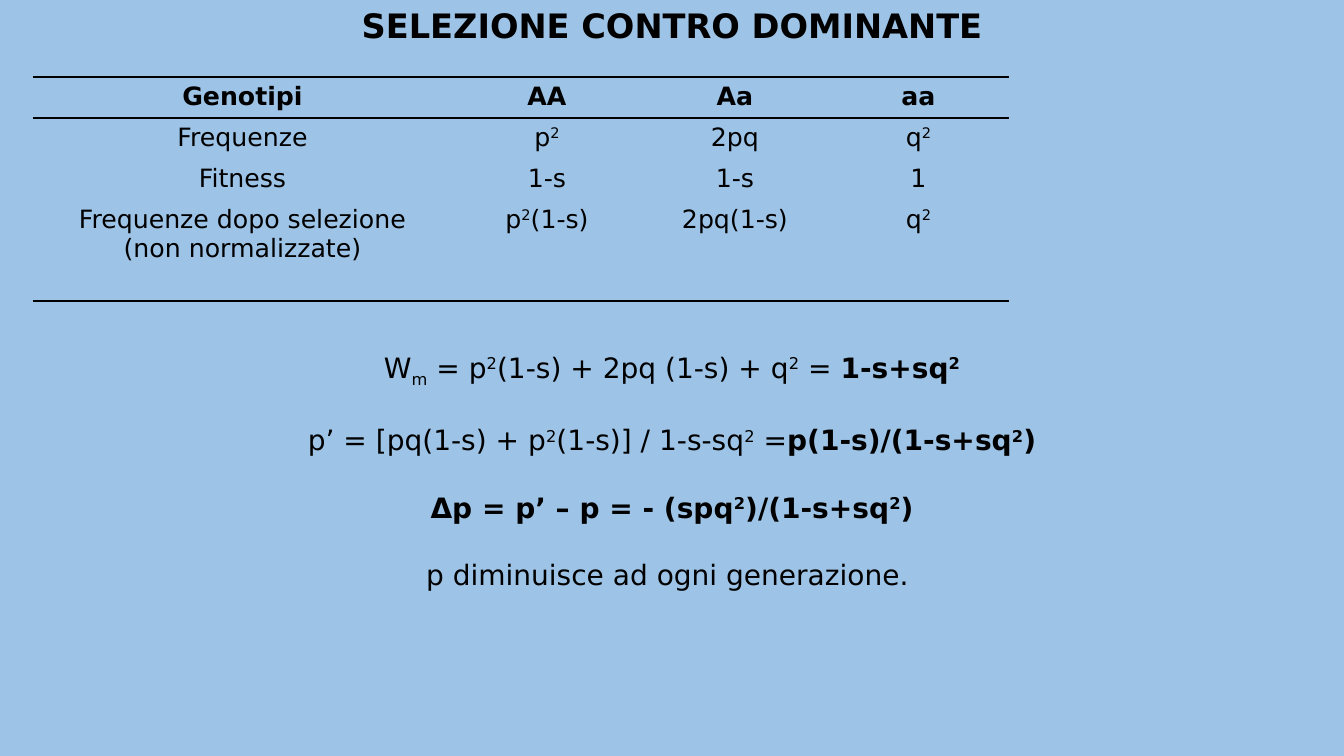
import lxml.etree
import pptx
import pptx.dml.color
import pptx.enum.text
import pptx.oxml.ns
import pptx.util

EMU = 914400 / 100.8
FONT = "DejaVu Sans"
COLORS = {"back": "9DC3E6", "ink": "000000"}
BASE = {"^": "30000", "_": "-25000"}
PLAIN = "{2D5ABB26-0587-4C30-8999-92F81FD0307C}"  # table style without grid

TITLE = "*SELEZIONE CONTRO DOMINANTE"
COLS = [419, 190, 186, 181]
ROWS = [41, 41, 41, 101]
CELLS = [
    ["*Genotipi", "*AA", "*Aa", "*aa"],
    ["Frequenze", "p|^2", "2pq", "q|^2"],
    ["Fitness", "1-s", "1-s", "1"],
    ["Frequenze dopo selezione\n(non normalizzate)",
     "p|^2|(1-s)", "2pq(1-s)", "q|^2"],
]
STEPS = [
    "W|_m| = p|^2|(1-s) + 2pq (1-s) + q|^2| = |*1-s+sq|*^2",
    "p’ = [pq(1-s) + p|^2|(1-s)] / 1-s-sq|^2| =|*p(1-s)/(1-s+sq|*^2|*)",
    "*Δp = p’ – p = - (spq|*^2|*)/(1-s+sq|*^2|*)",
    "p diminuisce ad ogni generazione. ",
]


def px(num):
    return pptx.util.Emu(round(num * EMU))


def color(name):
    return pptx.dml.color.RGBColor.from_string(COLORS[name])


def add_sub(node, tag, **attrs):
    return lxml.etree.SubElement(node, pptx.oxml.ns.qn(tag), attrs)


def add_runs(para, text, size):
    """Add runs split at |, where * marks bold, ^ raised and _ lowered."""
    para.alignment = pptx.enum.text.PP_ALIGN.CENTER
    for part in text.split("|"):
        bold = part.startswith("*")
        part = part[1:] if bold else part
        base = BASE.get(part[0])
        run = para.add_run()
        run.text = part[1:] if base else part
        run.font.name = FONT
        run.font.size = pptx.util.Pt(size)
        run.font.bold = bold
        run.font.color.rgb = color("ink")
        if base:
            run._r.get_or_add_rPr().set("baseline", base)


def fill_lines(frame, lines, size, gap=0):
    for num, line in enumerate(lines):
        para = frame.add_paragraph() if num else frame.paragraphs[0]
        para.space_before = pptx.util.Pt(gap if num else 0)
        add_runs(para, line, size)


def set_holder(shape, box, lines, size, gap=0):
    shape.left, shape.top, shape.width, shape.height = map(px, box)
    frame = shape.text_frame
    frame.word_wrap = True
    frame.auto_size = pptx.enum.text.MSO_AUTO_SIZE.SHAPE_TO_FIT_TEXT
    frame.vertical_anchor = pptx.enum.text.MSO_ANCHOR.TOP
    fill_lines(frame, lines, size, gap)


def drop_bullets(frame):
    for para in frame.paragraphs:
        props = para._p.get_or_add_pPr()
        props.set("marL", "0")
        props.set("indent", "0")
        add_sub(props, "a:buNone")


def add_rule(cell, side):
    line = add_sub(cell._tc.get_or_add_tcPr(), side, w="12700")
    fill = add_sub(line, "a:solidFill")
    add_sub(fill, "a:srgbClr", val=COLORS["ink"])


def add_grid(slide, left, top):
    frame = slide.shapes.add_table(len(ROWS), len(COLS), px(left), px(top),
                                   px(sum(COLS)), px(sum(ROWS)))
    table = frame.table
    table.horz_banding = False
    style = pptx.oxml.ns.qn("a:tableStyleId")
    table._tbl.tblPr.find(style).text = PLAIN
    for col, width in zip(table.columns, COLS):
        col.width = px(width)
    for num, (row, height) in enumerate(zip(table.rows, ROWS)):
        row.height = px(height)
        for cell, text in zip(row.cells, CELLS[num]):
            fill_lines(cell.text_frame, text.split("\n"), 18)
            if num == 0:
                add_rule(cell, "a:lnT")
            if num in (0, len(ROWS) - 1):
                add_rule(cell, "a:lnB")
            cell.fill.background()


def main():
    deck = pptx.Presentation()
    deck.slide_width, deck.slide_height = px(1344), px(756)
    slide = deck.slides.add_slide(deck.slide_layouts[1])
    back = slide.background.fill
    back.solid()
    back.fore_color.rgb = color("back")
    title, body = slide.placeholders
    set_holder(title, (0, 0, 1344, 75), [TITLE], 24)
    add_grid(slide, 33, 77)
    set_holder(body, (0, 345, 1344, 248), STEPS, 20, 24.4)
    drop_bullets(body.text_frame)
    deck.save("out.pptx")


if __name__ == "__main__":
    main()
